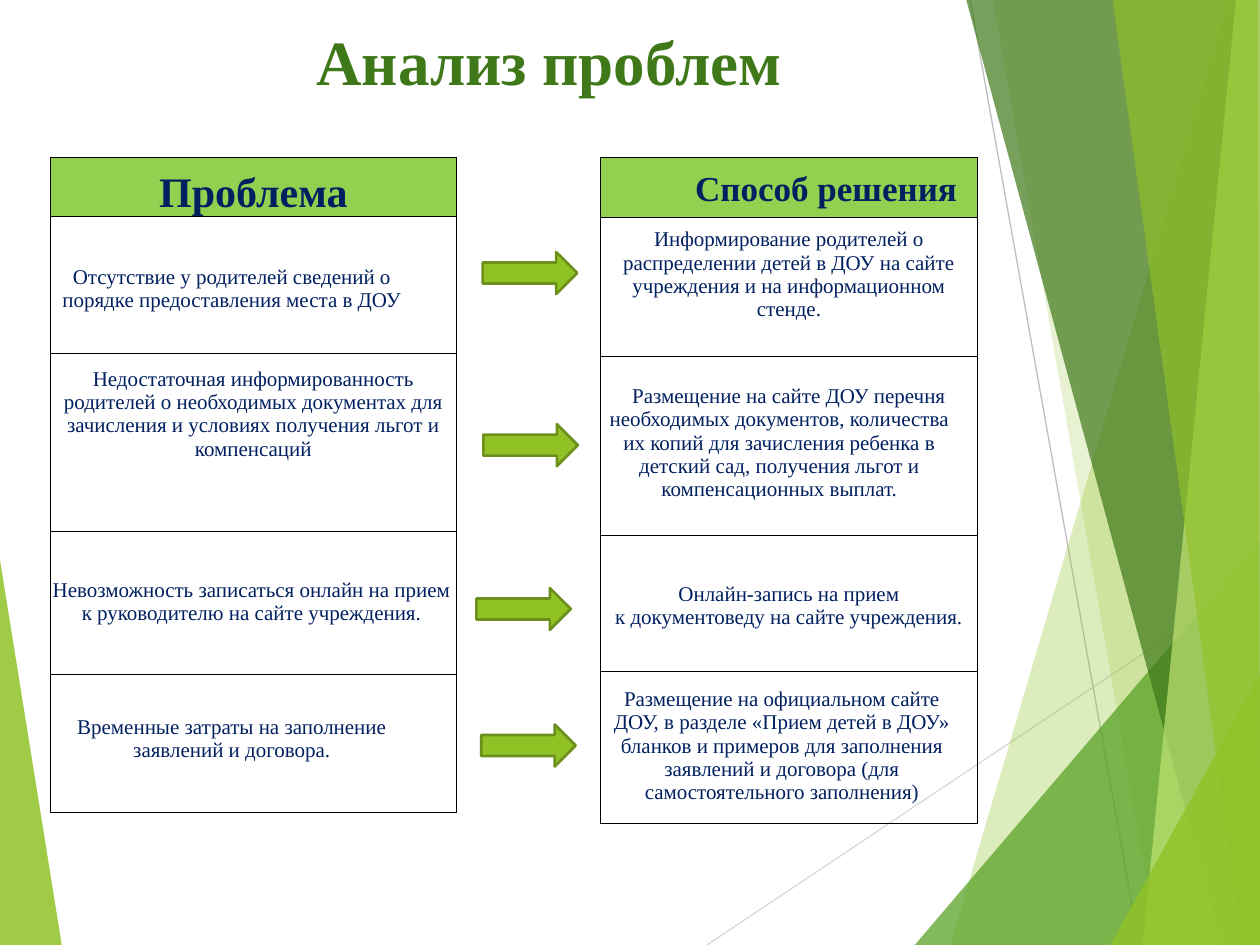
from dataclasses import dataclass

from lxml import etree
from pptx import Presentation
from pptx.dml.color import RGBColor
from pptx.enum import shapes, text
from pptx.oxml import ns
from pptx.util import Pt

W, H = 720, 540


@dataclass(frozen=True)
class Theme:
    font: str = "Times New Roman"
    title: str = "3F7819"
    ink: str = "002060"
    header: str = "92D050"
    lime: str = "90C226"
    lime_dark: str = "6B901C"
    lime_light: str = "C0E474"
    leaf: str = "54A021"
    forest: str = "3F7819"
    grid: str = "000000"
    title_size: int = 36
    body_size: int = 12


@dataclass(frozen=True)
class Cell:
    """Cell text with its insets in points; shift indents the first paragraph."""
    paragraphs: tuple
    top: float
    left: float = 0
    right: float = 0
    shift: float = 0


def rgb(color):
    return RGBColor.from_string(color)


def add_text(p, content, size, color, font, bold=False, align=None):
    r = p.add_run()
    r.text = content
    r.font.size, r.font.name, r.font.bold = Pt(size), font, bold
    r.font.color.rgb = rgb(color)
    p.alignment = align


class Deck:
    def __init__(self, theme):
        self.theme = theme
        self.prs = Presentation()
        self.prs.slide_width, self.prs.slide_height = Pt(W), Pt(H)
        self.s = self.prs.slides.add_slide(self.prs.slide_layouts[5])

    def title(self, content, x, y, w, h):
        sp = self.s.shapes.title
        sp.left, sp.top, sp.width, sp.height = map(Pt, (x, y, w, h))
        tf = sp.text_frame
        tf.margin_left = tf.margin_right = tf.margin_top = tf.margin_bottom = 0
        tf.word_wrap, tf.auto_size = False, text.MSO_AUTO_SIZE.NONE
        tf.vertical_anchor = text.MSO_ANCHOR.TOP
        add_text(tf.paragraphs[0], content, self.theme.title_size, self.theme.title,
                 self.theme.font, bold=True, align=text.PP_ALIGN.LEFT)

    def facet(self, points, color, alpha):
        """Translucent polygon; alpha is opacity in percent."""
        start, *rest = [(Pt(x), Pt(y)) for x, y in points]
        builder = self.s.shapes.build_freeform(*start)
        builder.add_line_segments(rest, close=True)
        sp = builder.convert_to_shape()
        sp.shadow.inherit = False
        sp.fill.solid()
        sp.fill.fore_color.rgb = rgb(color)
        sp.line.fill.background()
        clr = sp.fill._xPr.find(".//" + ns.qn("a:srgbClr"))
        etree.SubElement(clr, ns.qn("a:alpha"), val=str(alpha * 1000))

    def line(self, x1, y1, x2, y2, color):
        c = self.s.shapes.add_connector(
            shapes.MSO_CONNECTOR.STRAIGHT, *map(Pt, (x1, y1, x2, y2)))
        c.line.color.rgb = rgb(color)
        c.line.width = Pt(0.75)
        etree.SubElement(c._element.spPr, ns.qn("a:effectLst"))

    def arrow(self, x, y, w=54, h=24):
        sp = self.s.shapes.add_shape(
            shapes.MSO_SHAPE.RIGHT_ARROW, *map(Pt, (x, y, w, h)))
        sp.shadow.inherit = False
        sp.fill.solid()
        sp.fill.fore_color.rgb = rgb(self.theme.lime)
        sp.line.color.rgb = rgb(self.theme.lime_dark)
        sp.line.width = Pt(1.5)

    def borders(self, cell):
        tc_pr = cell._tc.get_or_add_tcPr()
        for side in "LRTB":
            ln = etree.SubElement(tc_pr, ns.qn(f"a:ln{side}"), w=str(Pt(0.5)))
            fill = etree.SubElement(ln, ns.qn("a:solidFill"))
            etree.SubElement(fill, ns.qn("a:srgbClr"), val=self.theme.grid)

    def column(self, x, y, w, heights, cells, header_size, header_align):
        """One-column table whose first cell is the header."""
        table = self.s.shapes.add_table(
            len(cells), 1, *map(Pt, (x, y, w, sum(heights)))).table
        table.first_row = table.horz_banding = False
        for i, (height, item) in enumerate(zip(heights, cells)):
            table.rows[i].height = Pt(height)
            cell, is_header = table.cell(i, 0), i == 0
            cell.margin_left, cell.margin_right = Pt(item.left), Pt(item.right)
            cell.margin_top, cell.margin_bottom = Pt(item.top), 0
            self.borders(cell)
            if is_header:
                cell.fill.solid()
                cell.fill.fore_color.rgb = rgb(self.theme.header)
            else:
                cell.fill.background()
            tf = cell.text_frame
            for n, content in enumerate(item.paragraphs):
                p = tf.add_paragraph() if n else tf.paragraphs[0]
                if item.shift and n == 0:
                    p._p.get_or_add_pPr().set("marL", str(Pt(item.shift)))
                add_text(p, content, header_size if is_header else self.theme.body_size,
                         self.theme.ink, self.theme.font, bold=is_header,
                         align=header_align if is_header else text.PP_ALIGN.CENTER)


PROBLEMS = [
    Cell(("Проблема",), 7.2),
    Cell(("Отсутствие у родителей сведений о порядке предоставления места в ДОУ",),
         28.2, right=24.6),
    Cell(("Недостаточная информированность родителей о необходимых документах для "
          "зачисления и условиях получения льгот и компенсаций",), 8),
    Cell(("Невозможность записаться онлайн на прием к руководителю на сайте учреждения.",),
         26.9, right=2),
    Cell(("Временные затраты на заполнение заявлений и договора.",), 23.4, right=24.6),
]
SOLUTIONS = [
    Cell(("Способ решения",), 7.2, left=54),
    Cell(("Информирование родителей о распределении детей в ДОУ на сайте учреждения "
          "и на информационном стенде.",), 6, left=10, right=10),
    Cell(("Размещение на сайте ДОУ перечня",
          "необходимых документов, количества их копий для зачисления ребенка в "
          "детский сад, получения льгот и компенсационных выплат."),
         16.2, right=11, shift=11),
    Cell(("Онлайн-запись на прием", "к документоведу на сайте учреждения."), 26.9),
    Cell(("Размещение на официальном сайте ДОУ, в разделе «Прием детей в ДОУ» бланков "
          "и примеров для заполнения заявлений и договора (для самостоятельного "
          "заполнения)",), 9.4, right=8),
]


def draw_backdrop(deck):
    t = deck.theme
    deck.facet([(0, 320), (35.3, H), (0, H)], t.lime, 85)
    deck.line(404, H, W, 329, "D9D9D9")
    deck.line(554.4, 0, 651, H, "BFBFBF")
    facets = [
        ([(702, 0), (543, H), (W, H), (W, 0)], t.lime, 30),
        ([(567.4, 0), (661.7, H), (W, H), (W, 0)], t.lime, 20),
        ([(522.7, H), (W, 309), (W, H)], t.leaf, 72),
        ([(552.2, 0), (698.4, H), (W, H), (W, 0)], t.forest, 70),
        ([(706.3, 0), (653, H), (W, H), (W, 0)], t.lime_light, 70),
        ([(635.8, 0), (709.9, H), (W, H), (718.6, 0)], t.lime, 65),
        ([(634.5, H), (W, 385.2), (W, H)], t.lime, 80),
    ]
    for facet in facets:
        deck.facet(*facet)


def main():
    deck = Deck(Theme())
    draw_backdrop(deck)
    deck.column(28.8, 90, 232, (33.7, 78.3, 101.7, 81.7, 78.9), PROBLEMS,
                24, text.PP_ALIGN.CENTER)
    deck.column(343.2, 90, 215.3, (34.3, 79.4, 102.3, 77.7, 86.9), SOLUTIONS,
                20, text.PP_ALIGN.LEFT)
    deck.title("Анализ проблем", 180.7, 13, 271, 44.6)
    for x, y in ((275.8, 144), (276.2, 242.4), (272.2, 336), (275, 414)):
        deck.arrow(x, y)
    deck.prs.save("out.pptx")


if __name__ == "__main__":
    main()
